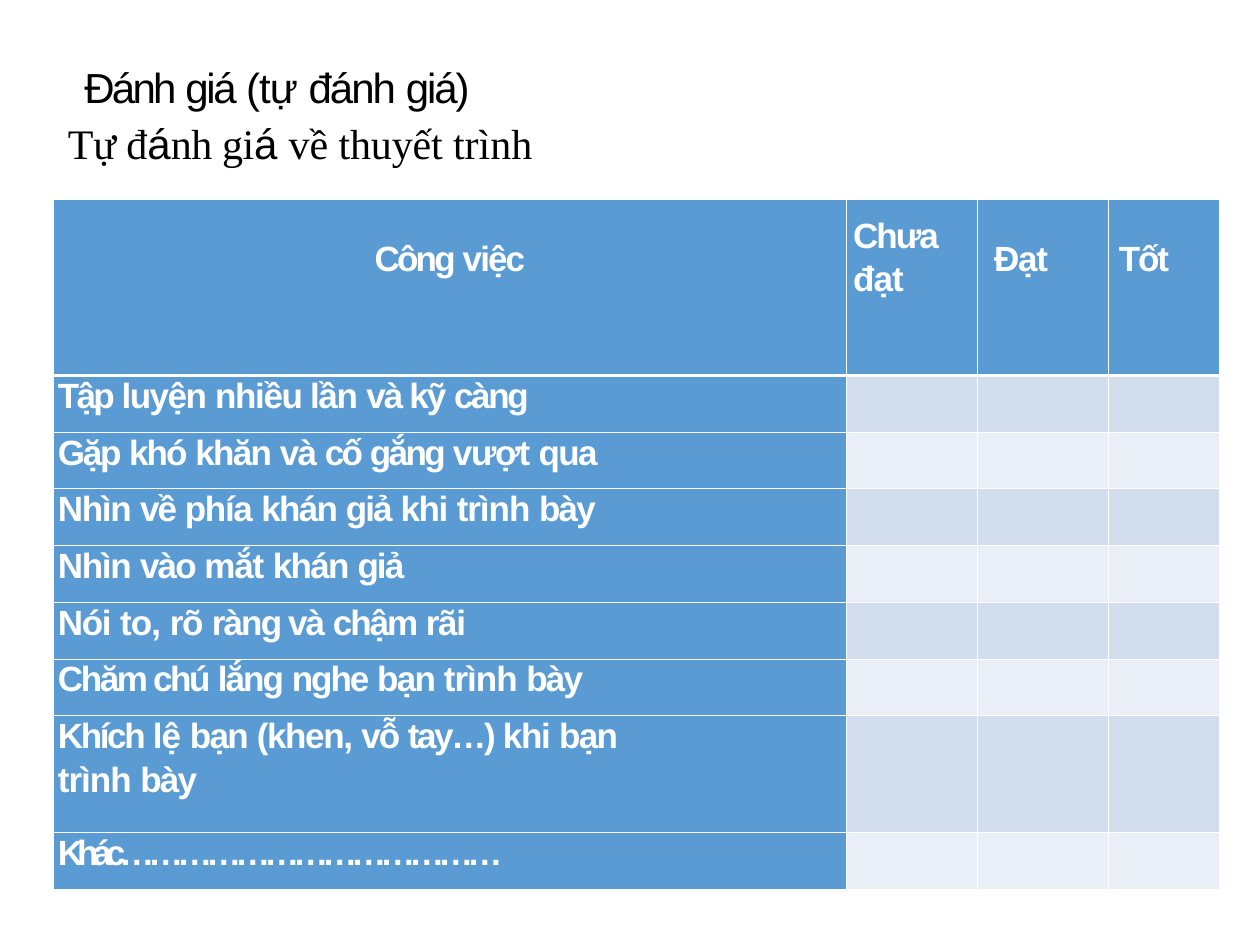
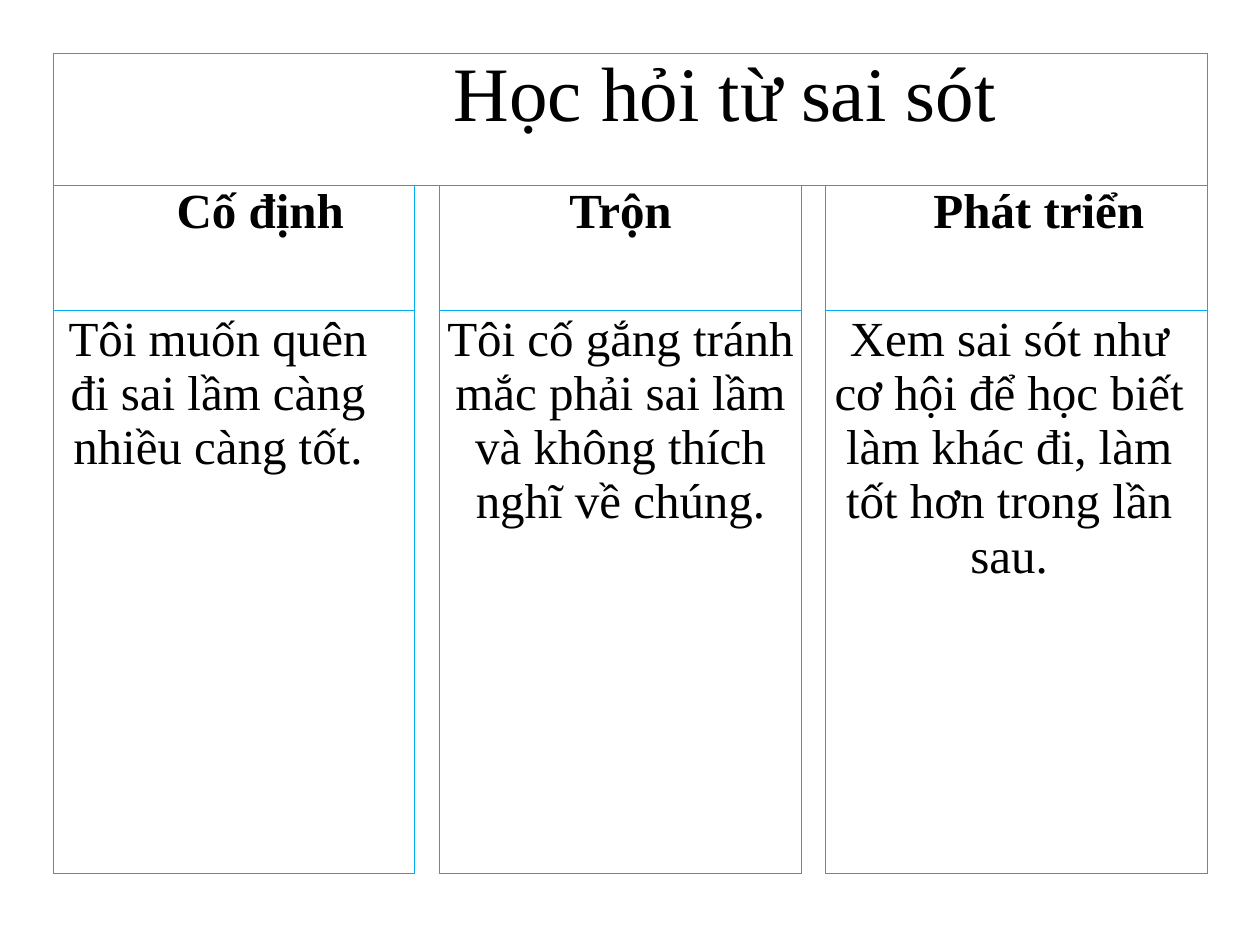
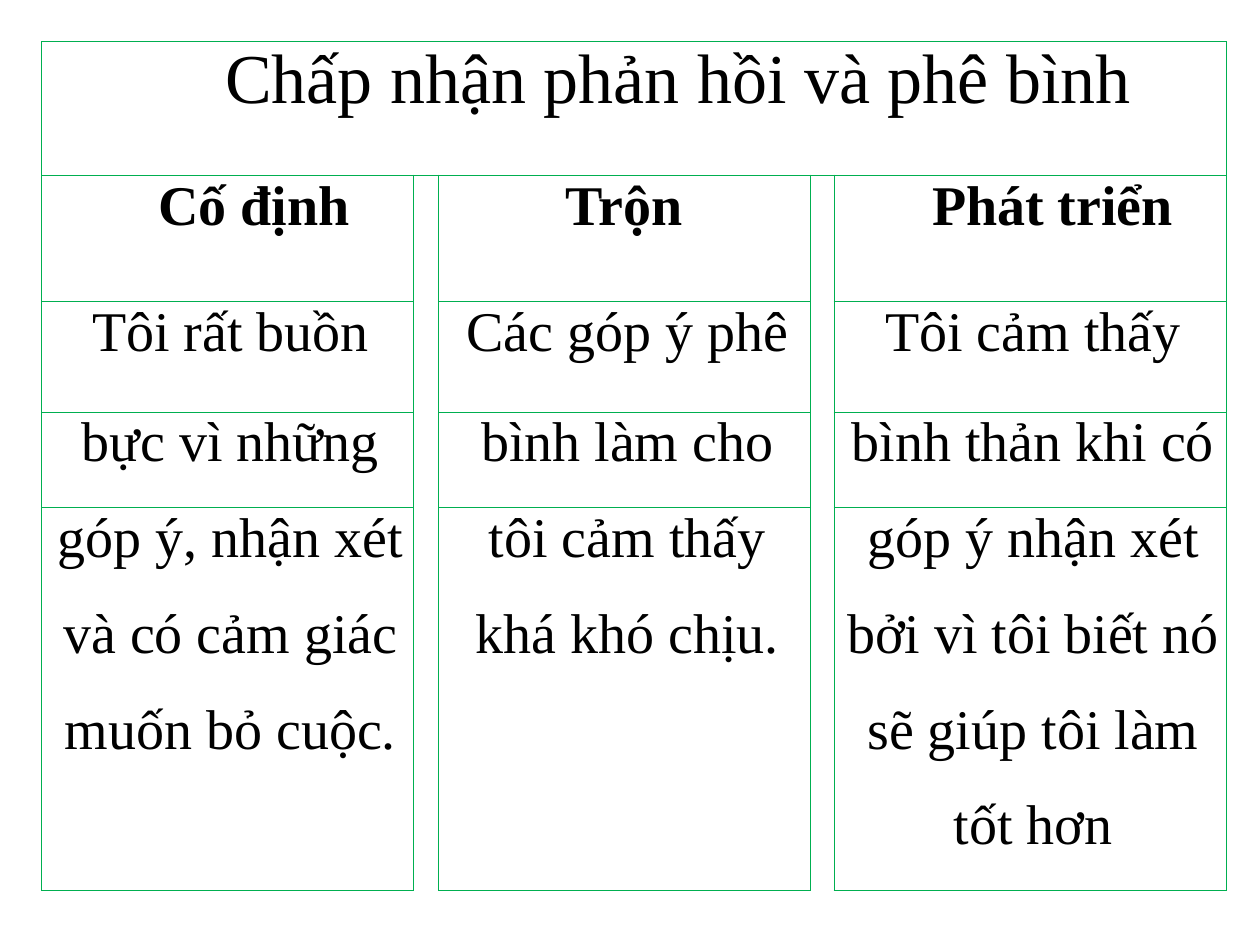
from lxml import etree
from pptx import Presentation
from pptx.dml.color import RGBColor
from pptx.enum.text import MSO_AUTO_SIZE, PP_ALIGN
from pptx.oxml.ns import qn
from pptx.util import Inches, Pt

LEFT = PP_ALIGN.LEFT
CENTER = PP_ALIGN.CENTER
GROW = MSO_AUTO_SIZE.SHAPE_TO_FIT_TEXT

SANS = "Arial"
SERIF = "Times New Roman"
BLACK = RGBColor(0x00, 0x00, 0x00)
WHITE = RGBColor(0xFF, 0xFF, 0xFF)
BLUE = RGBColor(0x5B, 0x9B, 0xD4)
BAND_DARK = RGBColor(0xD2, 0xDE, 0xEE)
BAND_LIGHT = RGBColor(0xEA, 0xEE, 0xF7)
CYAN = RGBColor(0x00, 0xAF, 0xEF)
GREEN = RGBColor(0x00, 0xAF, 0x50)
PLAIN_TABLE_STYLE = "{2D5ABB26-0587-4C30-8999-92F81FD0307C}"

HEADINGS = [
    (0.32, 0, CENTER, [[("Công ", -1.6), ("việc", -1.1)]]),
    (0.14, 0.05, LEFT, [[("Chưa", -1.1)], [("đạt", -0.5)]]),
    (0.32, 0.13, LEFT, [[("Đạt", -0.7)]]),
    (0.32, 0.08, LEFT, [[("Tốt", -1.2)]]),
]
TASKS = [
    [[("Tập ", -1.6), ("luyện ", -0.9), ("nhiều lần ", -0.8), ("và kỹ ", -1.1), ("càng", -1.4)]],
    [[("Gặp ", -1.3), ("khó ", -1.1), ("khăn ", -1), ("và ", -1.1), ("cố ", -1.6),
      ("gắng ", -1.5), ("vượt ", -0.8), ("qua", -1)]],
    [[("Nhìn ", -0.8), ("về ", -1.1), ("phía ", -0.8), ("khán ", -1), ("giả ", -1.1),
      ("khi ", -0.8), ("trình ", -0.6), ("bày", -1.1)]],
    [[("Nhìn ", -0.8), ("vào ", -1.1), ("mắt ", -0.7), ("khán ", -1), ("giả", -1.1)]],
    [[("Nói ", -0.8), ("to, ", -0.5), ("rõ ", -0.8), ("ràng và ", -1.1), ("chậm ", -1.2),
      ("rãi", -0.8)]],
    [[("Chăm chú ", -1.4), ("lắng ", -1.1), ("nghe ", -1.2), ("bạn ", -1), ("trình ", -0.6),
      ("bày", -1.1)]],
    [[("Khích ", -1.4), ("lệ ", -0.6), ("bạn ", -1), ("(khen, ", -0.8), ("vỗ ", -1.2),
      ("tay…) ", -1.4), ("khi ", -0.8), ("bạn", -1)],
     [("trình ", -0.6), ("bày", -1.1)]],
    [[("Khác…………………………………", -3.5)]],
]
MINDSETS = [("Cố định", 0.42), ("Trộn", 0), ("Phát triển", 0.36)]
MISTAKES = [[
    "Tôi muốn quên đi sai lầm càng nhiều càng tốt.",
    "Tôi cố gắng tránh mắc phải sai lầm và không thích nghĩ về chúng.",
    "Xem sai sót như cơ hội để học biết làm khác đi, làm tốt hơn trong lần sau.",
]]
FEEDBACK = [
    ["Tôi rất buồn", "Các góp ý phê", "Tôi cảm thấy"],
    ["bực vì những", "bình làm cho", "bình thản khi có"],
    ["góp ý, nhận xét", "tôi cảm thấy", "góp ý nhận xét"],
    ["và có cảm giác", "khá khó chịu.", "bởi vì tôi biết nó"],
    ["muốn bỏ cuộc.", "", "sẽ giúp tôi làm"],
    ["", "", "tốt hơn"],
]


def add_run(paragraph, text, spacing=0, font_name=None):
    """Append a run with letter spacing in points."""
    run = paragraph.add_run()
    run.text = text
    if spacing:
        run._r.get_or_add_rPr().set("spc", str(round(spacing * 100)))
    if font_name:
        run.font.name = font_name


def style_paragraph(paragraph, size, name, color, bold=False, align=LEFT, indent=0, right=0):
    """Set the font, alignment and side indents of a paragraph."""
    font = paragraph.font
    font.size, font.name, font.bold = Pt(size), name, bold
    font.color.rgb = color
    paragraph.alignment = align
    properties = paragraph._p.get_or_add_pPr()
    properties.set("marL", str(Inches(indent)))
    properties.set("marR", str(Inches(right)))
    properties.set("indent", "0")


def set_margins(target, top=0):
    """Clear the insets of a cell or text frame except the top one."""
    target.margin_left = target.margin_right = target.margin_bottom = 0
    target.margin_top = Inches(top)


def set_borders(cell, color, **widths):
    """Draw cell borders of given point widths, named by side L, R, T, B."""
    properties = cell._tc.get_or_add_tcPr()
    sides = [side for side in "LRTB" if side in widths]
    for position, side in enumerate(sides):
        line = etree.Element(qn(f"a:ln{side}"), w=str(Pt(widths[side])))
        fill = etree.SubElement(line, qn("a:solidFill"))
        etree.SubElement(fill, qn("a:srgbClr"), val=str(color))
        properties.insert(position, line)


def add_plain_table(slide, left, top, widths, heights):
    """Add an unstyled table with the given column widths and row heights."""
    frame = slide.shapes.add_table(
        len(heights), len(widths), Inches(left), Inches(top),
        Inches(sum(widths)), Inches(sum(heights)))
    table = frame.table
    table.first_row = table.horz_banding = False
    table._tbl.tblPr.find(qn("a:tableStyleId")).text = PLAIN_TABLE_STYLE
    for column, width in zip(table.columns, widths):
        column.width = Inches(width)
    for row, height in zip(table.rows, heights):
        row.height = Inches(height)
    for cell in table.iter_cells():
        set_margins(cell)
    return table


def write_checklist_cell(cell, lines, top, indent, align=LEFT):
    """Write the white bold lines of a checklist cell."""
    set_margins(cell, top)
    for number, pieces in enumerate(lines):
        paragraph = cell.text_frame.paragraphs[0] if number == 0 else cell.text_frame.add_paragraph()
        if number:
            paragraph.space_before = Pt(2.5)
        style_paragraph(paragraph, 20, SANS, WHITE, True, align, indent)
        for piece in pieces:
            add_run(paragraph, *piece)


def add_checklist(slide):
    """Add the self-assessment table."""
    heights = [1.4] + [0.45] * 6 + [0.93, 0.45]
    table = add_plain_table(slide, 0.42, 1.58, [6.3, 1.04, 1.04, 0.88], heights)
    last_row, last_column = len(heights) - 1, len(HEADINGS) - 1
    for row in range(len(heights)):
        for column in range(len(HEADINGS)):
            cell = table.cell(row, column)
            cell.fill.solid()
            band = BAND_DARK if row % 2 else BAND_LIGHT
            cell.fill.fore_color.rgb = BLUE if row == 0 or column == 0 else band
            set_borders(
                cell, WHITE,
                L=0.25 if column == 0 else 0.5,
                R=0.25 if column == last_column else 0.5,
                T=1.5 if row == 1 else 0.5,
                B=1.5 if row == 0 else 0.25 if row == last_row else 0.5)
    for column, (top, indent, align, lines) in enumerate(HEADINGS):
        write_checklist_cell(table.cell(0, column), lines, top, indent, align)
    for row, lines in enumerate(TASKS, start=1):
        write_checklist_cell(table.cell(row, 0), lines, 0.01, 0.04)


def add_checklist_title(slide):
    """Add the two title lines above the checklist."""
    box = slide.shapes.add_textbox(Inches(0.53), Inches(0.42), Inches(5.3), Inches(0.92))
    frame = box.text_frame
    frame.word_wrap = True
    frame.auto_size = GROW
    set_margins(frame, 0.07)
    heading = frame.paragraphs[0]
    style_paragraph(heading, 24, SANS, BLACK, indent=0.14)
    for piece in [("Đánh ", -1.6), ("giá ", -1.3), ("(tự ", -0.6), ("đánh ", -1.1), ("giá)", -1.2)]:
        add_run(heading, *piece)
    subheading = frame.add_paragraph()
    subheading.space_before = Pt(3)
    style_paragraph(subheading, 24, SERIF, BLACK, indent=0.01)
    for piece in [("Tự ", -0.1), ("đ", -0.3), ("á", -0.3, SANS), ("nh ", -0.3), ("gi", -0.4),
                  ("á ", -0.4, SANS), ("về ",), ("thuyết ", -0.1), ("trình",)]:
        add_run(subheading, *piece)


def write_centered(cell, text, size, bold=False, indent=0.05, right=0, top=0):
    """Write one centred serif paragraph in a cell."""
    set_margins(cell, top)
    paragraph = cell.text_frame.paragraphs[0]
    style_paragraph(paragraph, size, SERIF, BLACK, bold, CENTER, indent, right)
    add_run(paragraph, text)


def add_mindset_table(slide, position, widths, heights, color, title, title_size, title_indent,
                      size, body, rights=(0, 0, 0), top=0):
    """Add a titled table of three mindset columns parted by open gaps."""
    table = add_plain_table(slide, position, position, widths, heights)
    last_row = len(heights) - 1
    table.cell(0, 0).merge(table.cell(0, 4))
    write_centered(table.cell(0, 0), title, title_size, indent=title_indent)
    set_borders(table.cell(0, 0), color, L=0.5, R=0.5, T=0.5, B=0.5)
    for gap in (1, 3):
        table.cell(1, gap).merge(table.cell(last_row, gap))
        set_borders(table.cell(1, gap), color, L=0.5, R=0.5, T=0.5)
    for index, (heading, indent) in enumerate(MINDSETS):
        column = 2 * index
        write_centered(table.cell(1, column), heading, size, True, indent)
        set_borders(table.cell(1, column), color, L=0.5, R=0.5, T=0.5, B=0.5)
        for row, texts in enumerate(body, start=2):
            cell = table.cell(row, column)
            if texts[index]:
                write_centered(cell, texts[index], size, right=rights[index], top=top)
            sides = {"L": 0.5, "R": 0.5}
            if row in (2, 3):
                sides["T"] = 0.5
            if row in (2, last_row):
                sides["B"] = 0.5
            set_borders(cell, color, **sides)


def main():
    """Build the three slides and save them."""
    presentation = Presentation()
    presentation.slide_width = Inches(10)
    presentation.slide_height = Inches(7.5)
    blank = presentation.slide_layouts[6]
    checklist, mistakes, feedback = [presentation.slides.add_slide(blank) for _ in range(3)]
    add_checklist(checklist)
    add_checklist_title(checklist)
    add_mindset_table(
        mistakes, 0.42, [2.87, 0.2, 2.87, 0.19, 3.03], [1.05, 0.99, 4.47], CYAN,
        "Học hỏi từ sai sót", 44, 1.51, 28, MISTAKES, rights=(0.3, 0.05, 0.16), top=0.02)
    add_mindset_table(
        feedback, 0.33, [2.95, 0.2, 2.95, 0.19, 3.11], [1.06, 1, 0.88] + [0.76] * 5, GREEN,
        "Chấp nhận phản hồi và phê bình", 40, 0.7, 32, FEEDBACK)
    presentation.save("out.pptx")


if __name__ == "__main__":
    main()
